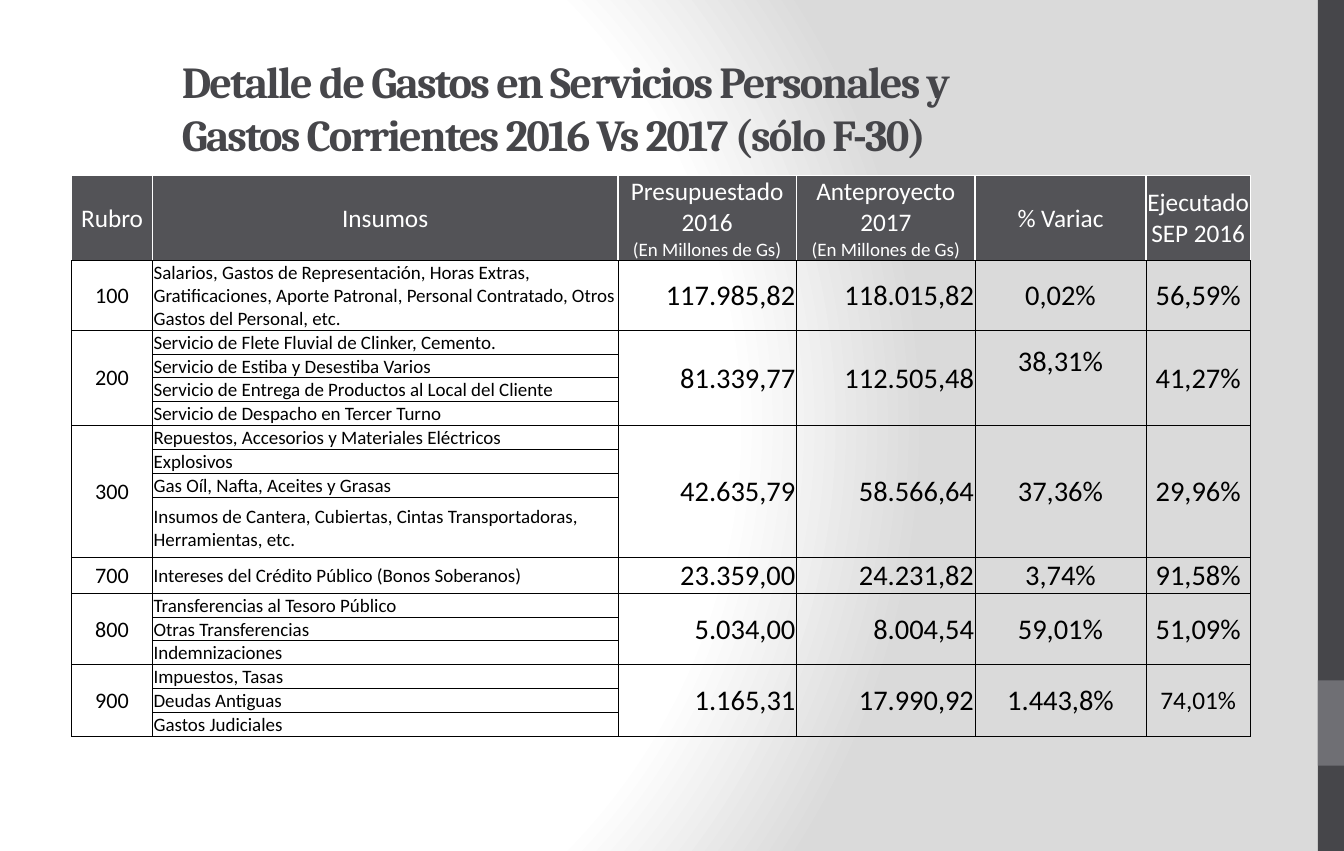
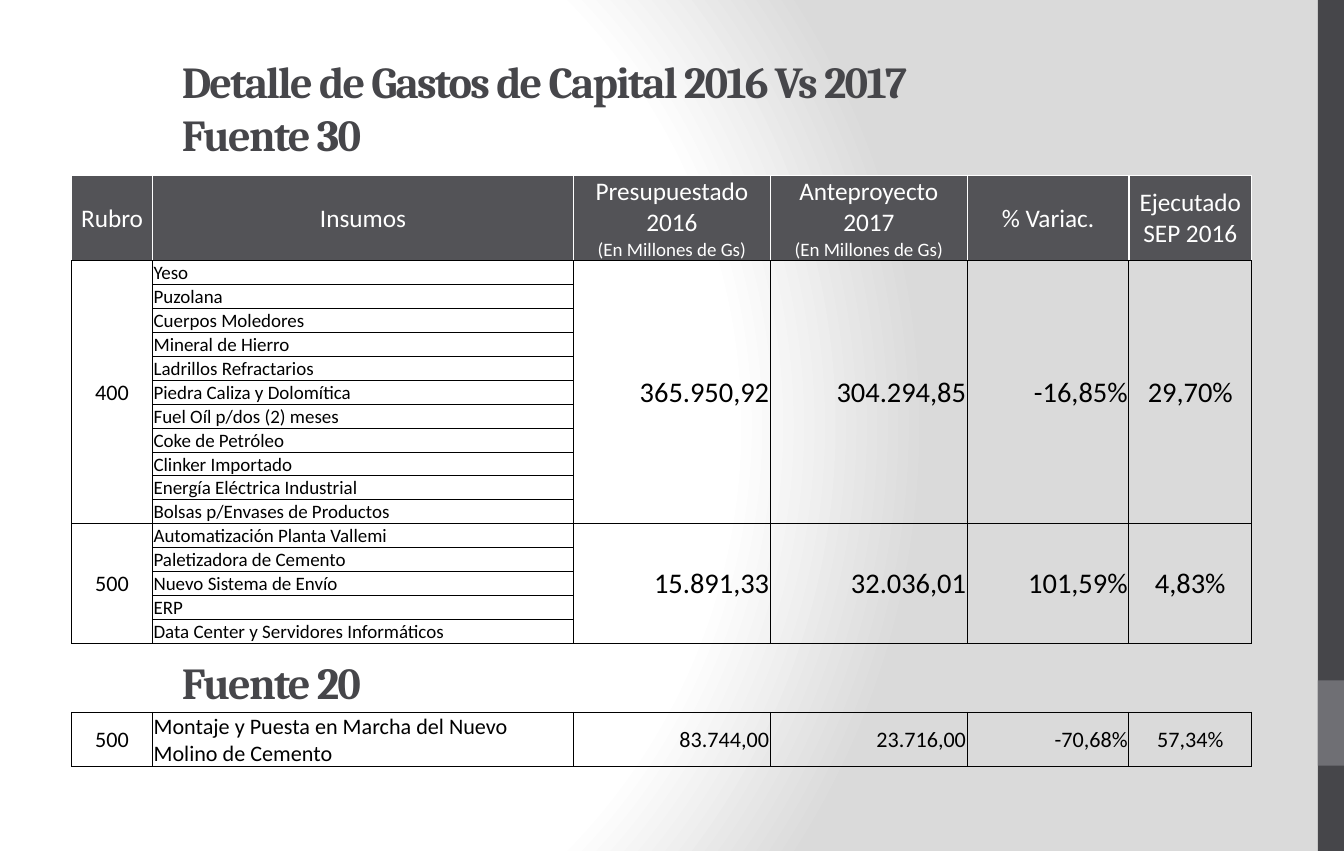
from pptx import Presentation
from pptx import util as u
from pptx.dml.color import RGBColor
from pptx.enum import shapes, text
from pptx.oxml import parse_xml
from pptx.oxml.ns import nsdecls, qn

COLORS = {"dark": "46464A", "accent": "6F6F74", "header": "535357",
          "white": "FFFFFF", "shade": "DADADA", "black": "000000"}
LEFT, CENTER, RIGHT = text.PP_ALIGN.LEFT, text.PP_ALIGN.CENTER, text.PP_ALIGN.RIGHT
WIDTH, HEIGHT = 11.81, 7.48
TABLE_LEFT, TABLE_TOP = 0.63, 1.54
HEADER_HEIGHT, ITEM_HEIGHT = 0.75, 0.21


def rgb(name):
    return RGBColor.from_string(COLORS[name])


def write(tf, lines, size=12, color="black", font="Calibri", bold=False,
          align=LEFT, spacing=None):
    for i, line in enumerate(lines):
        content, line_size = line if isinstance(line, tuple) else (line, size)
        p = tf.paragraphs[0] if i == 0 else tf.add_paragraph()
        p.alignment = align
        r = p.add_run()
        r.text = content
        r.font.size = u.Pt(line_size)
        r.font.name = font
        r.font.bold = bold
        r.font.color.rgb = rgb(color)
        if spacing is not None:
            r._r.get_or_add_rPr().set("spc", str(round(spacing * 100)))


def set_background(s):
    s.background.fill.solid()
    bg = s._element.find(".//" + qn("p:bgPr"))
    stops = "".join(
        f'<a:gs pos="{pos * 1000}"><a:srgbClr val="{COLORS[name]}"/></a:gs>'
        for pos, name in ((0, "white"), (75, "white"), (100, "shade")))
    bg.replace(bg[0], parse_xml(
        f'<a:gradFill {nsdecls("a")} rotWithShape="1"><a:gsLst>{stops}</a:gsLst>'
        '<a:path path="circle"><a:fillToRect l="20000" t="50000" r="100000" b="50000"/>'
        '</a:path></a:gradFill>'))


def add_band(s, top, height, color):
    sp = s.shapes.add_shape(shapes.MSO_SHAPE.RECTANGLE, u.Inches(WIDTH - 0.23),
                            u.Inches(top), u.Inches(0.23), u.Inches(height))
    sp.shadow.inherit = False
    sp.fill.solid()
    sp.fill.fore_color.rgb = rgb(color)
    sp.line.fill.background()


def add_title(s, lines, top=0.43):
    sp = s.shapes.add_textbox(u.Inches(1.5), u.Inches(top), u.Inches(8.64), u.Inches(0.79))
    sp.text_frame.word_wrap = True
    write(sp.text_frame, lines, size=28, color="dark", font="Cambria", bold=True, spacing=-1.1)


def new_slide(prs, title):
    s = prs.slides.add_slide(prs.slide_layouts[6])
    set_background(s)
    add_band(s, 0, HEIGHT, "dark")
    add_band(s, 5.98, 0.75, "accent")
    add_title(s, title)
    return s


def set_borders(cell, side="black", bottom="black", width=0.5):
    tc_pr = cell._tc.get_or_add_tcPr()
    for i, edge in enumerate("LRTB"):
        color, weight = (bottom, 0.5) if edge == "B" else (side, width)
        tc_pr.insert(i, parse_xml(
            f'<a:ln{edge} {nsdecls("a")} w="{u.Pt(weight)}"><a:solidFill>'
            f'<a:srgbClr val="{COLORS[color]}"/></a:solidFill></a:ln{edge}>'))


def fill_cell(cell, lines, bottom=0, **fmt):
    cell.vertical_anchor = text.MSO_ANCHOR.MIDDLE
    cell.margin_left = cell.margin_right = cell.margin_top = u.Inches(0.01)
    cell.margin_bottom = u.Inches(bottom)
    write(cell.text_frame, lines, **fmt)


def add_grid(s, top, widths, heights):
    frame = s.shapes.add_table(len(heights), len(widths), u.Inches(TABLE_LEFT), u.Inches(top),
                               u.Inches(sum(widths)), u.Inches(sum(heights)))
    tbl = frame.table
    tbl.first_row = tbl.horz_banding = False
    for parts, name, sizes in ((tbl.columns, "width", widths), (tbl.rows, "height", heights)):
        for part, size in zip(parts, sizes):
            setattr(part, name, u.Inches(size))
    for cell in tbl.iter_cells():
        cell.fill.background()
    return tbl


def add_header(tbl, variation):
    unit = ("(En Millones de Gs)", 12)
    labels = (["Rubro"], ["Insumos"], ["Presupuestado 2016", unit],
              ["Anteproyecto", "2017", unit], [variation], ["Ejecutado SEP 2016"])
    for col, lines in enumerate(labels):
        cell = tbl.cell(0, col)
        fill_cell(cell, lines, size=16, color="white", align=CENTER)
        cell.fill.solid()
        cell.fill.fore_color.rgb = rgb("header")
        set_borders(cell, side="white", width=1)


def add_budget(s, top, widths, groups, variation=None, variation_align=CENTER,
               heights=None, item_size=12, value_size=18, overrides=None):
    heights, overrides = heights or {}, overrides or {}
    items = [item for group in groups for item in group[1]]
    row_heights = [heights.get(item, ITEM_HEIGHT) for item in items]
    first = 1 if variation else 0
    tbl = add_grid(s, top, widths, [HEADER_HEIGHT] * first + row_heights)
    if variation:
        add_header(tbl, variation)
    aligns = (RIGHT, RIGHT, variation_align, CENTER)
    row = first
    for rubro, names, *values in groups:
        last = row + len(names) - 1
        for i, name in enumerate(names):
            fill_cell(tbl.cell(row + i, 1), [name], size=item_size)
        fill_cell(tbl.cell(row, 0), [rubro], size=14, align=CENTER)
        for col, (value, align) in enumerate(zip(values, aligns), 2):
            fmt = {"size": value_size, "align": align, **overrides.get((rubro, col), {})}
            fill_cell(tbl.cell(row, col), [value], **fmt)
        for col in range(len(widths)):
            for r in range(row, last + 1):
                set_borders(tbl.cell(r, col))
            if col != 1 and last > row:
                tbl.cell(row, col).merge(tbl.cell(last, col))
        row = last + 1


SALARIES = ("Salarios, Gastos de Representación, Horas Extras, Gratificaciones, Aporte Patronal, "
            "Personal Contratado, Otros Gastos del Personal, etc.")
QUARRY = "Insumos de Cantera, Cubiertas, Cintas Transportadoras, Herramientas, etc."
INTEREST = "Intereses del Crédito Público (Bonos Soberanos)"
MILL = "Montaje y Puesta en Marcha del Nuevo Molino de Cemento"

CURRENT = [
    ("100", [SALARIES], "117.985,82", "118.015,82", "0,02%", "56,59%"),
    ("200", ["Servicio de Flete Fluvial de Clinker, Cemento.",
             "Servicio de Estiba y Desestiba Varios",
             "Servicio de Entrega de Productos al Local del Cliente",
             "Servicio de Despacho en Tercer Turno"],
     "81.339,77", "112.505,48", "38,31%", "41,27%"),
    ("300", ["Repuestos, Accesorios y Materiales Eléctricos", "Explosivos",
             "Gas Oíl, Nafta, Aceites y Grasas", QUARRY],
     "42.635,79", "58.566,64", "37,36%", "29,96%"),
    ("700", [INTEREST], "23.359,00", "24.231,82", "3,74%", "91,58%"),
    ("800", ["Transferencias al Tesoro Público", "Otras Transferencias", "Indemnizaciones"],
     "5.034,00", "8.004,54", "59,01%", "51,09%"),
    ("900", ["Impuestos, Tasas", "Deudas Antiguas", "Gastos Judiciales"],
     "1.165,31", "17.990,92", "1.443,8%", "74,01%"),
]
CAPITAL = [
    ("400", ["Yeso", "Puzolana", "Cuerpos Moledores", "Mineral de Hierro",
             "Ladrillos Refractarios", "Piedra Caliza y Dolomítica",
             "Fuel Oíl p/dos (2) meses", "Coke de Petróleo", "Clinker Importado",
             "Energía Eléctrica Industrial", "Bolsas p/Envases de Productos"],
     "365.950,92", "304.294,85", "-16,85%", "29,70%"),
    ("500", ["Automatización Planta Vallemi", "Paletizadora de Cemento",
             "Nuevo Sistema de Envío", "ERP", "Data Center y Servidores Informáticos"],
     "15.891,33", "32.036,01", "101,59%", "4,83%"),
]
SOURCE_20 = [("500", [MILL], "83.744,00", "23.716,00", "-70,68%", "57,34%")]


def current_slide(prs):
    s = new_slide(prs, ["Detalle de Gastos en Servicios Personales y",
                        "Gastos Corrientes 2016 Vs 2017 (sólo F-30)"])
    add_budget(s, TABLE_TOP, [0.71, 4.09, 1.57, 1.57, 1.5, 0.92], CURRENT, "% Variac",
               heights={SALARIES: 0.61, QUARRY: 0.53, INTEREST: 0.31},
               overrides={("200", 4): {"bottom": 0.3}, ("900", 5): {"size": 16}})


def capital_slide(prs):
    s = new_slide(prs, ["Detalle de Gastos de Capital 2016 Vs 2017", "Fuente 30"])
    widths = [0.71, 3.7, 1.73, 1.73, 1.42, 1.08]
    add_budget(s, TABLE_TOP, widths, CAPITAL, "% Variac.", variation_align=RIGHT)
    add_budget(s, 6.26, widths, SOURCE_20, variation_align=RIGHT,
               heights={MILL: 0.47}, item_size=14, value_size=14)
    add_title(s, ["Fuente 20"], top=5.71)


def main():
    prs = Presentation()
    prs.slide_width, prs.slide_height = u.Inches(WIDTH), u.Inches(HEIGHT)
    current_slide(prs)
    capital_slide(prs)
    prs.save("out.pptx")


if __name__ == "__main__":
    main()
